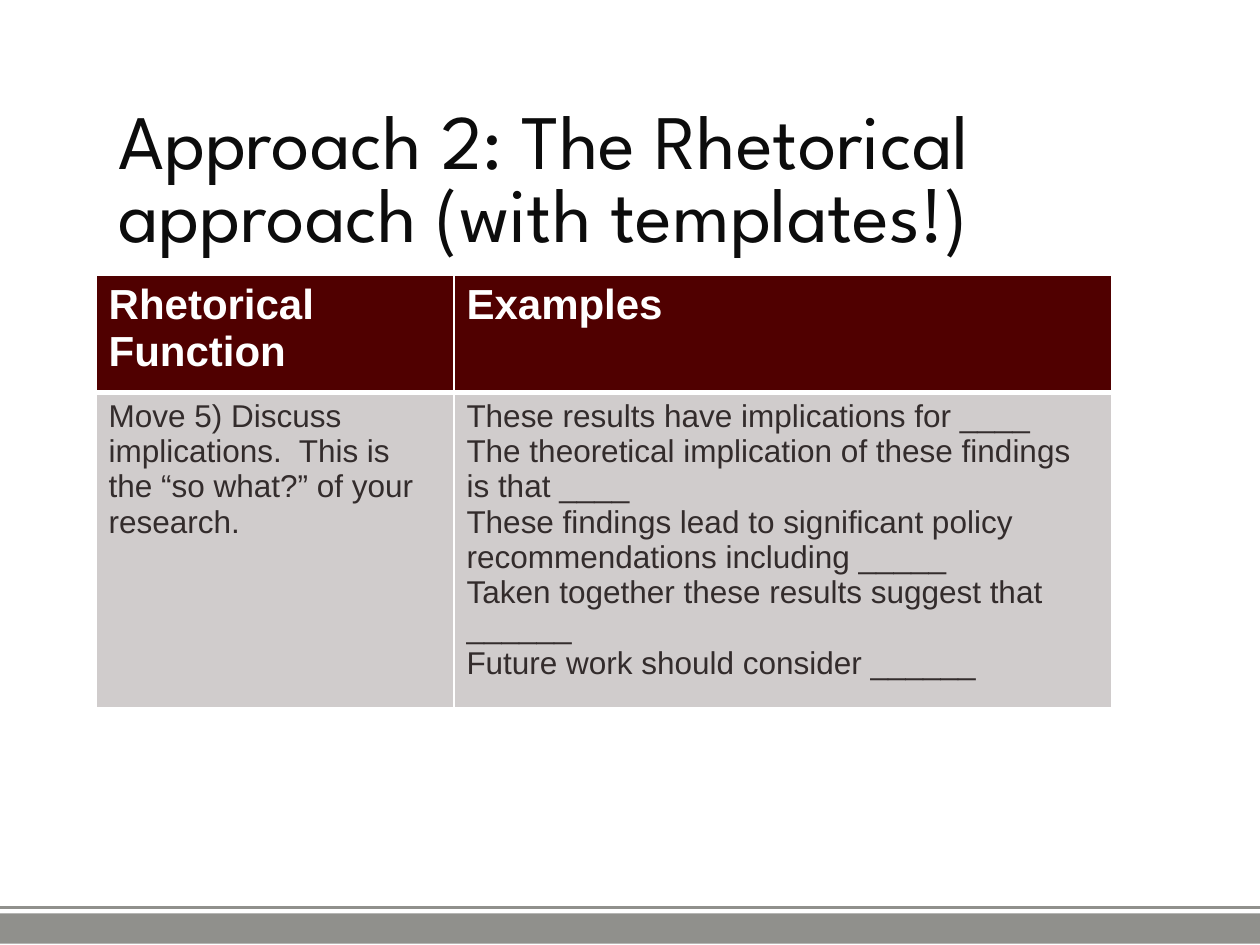
from dataclasses import dataclass

from lxml import etree
from pptx import Presentation
from pptx.dml.color import RGBColor
from pptx.enum.shapes import MSO_CONNECTOR, MSO_SHAPE
from pptx.enum.text import MSO_ANCHOR
from pptx.oxml.ns import qn
from pptx.util import Pt

RECTANGLE = MSO_SHAPE.RECTANGLE
STRAIGHT = MSO_CONNECTOR.STRAIGHT
MIDDLE = MSO_ANCHOR.MIDDLE


@dataclass(frozen=True)
class Theme:
    title_font: str = "League Spartan"
    body_font: str = "Arial"
    title_size: int = 44
    header_size: int = 24
    body_size: int = 18
    title_color: str = "0C0C0C"
    header_color: str = "FFFFFF"
    header_fill: str = "500000"
    body_color: str = "332C2C"
    body_fill: str = "D0CCCC"
    border: str = "FFFFFF"
    footer: str = "90908C"


THEME = Theme()
SLIDE_WIDTH, SLIDE_HEIGHT = 720, 540
COLUMN_WIDTHS = (204.5, 375.8)
ROW_HEIGHTS = (67, 125.3)
HEADINGS = ("Rhetorical Function", "Examples")
FUNCTION = ("Move 5) Discuss implications.  This is the “so what?” of your research.",)
EXAMPLES = (
    "These results have implications for ____",
    "The theoretical implication of these findings is that ____",
    "These findings lead to significant policy recommendations including _____",
    "Taken together these results suggest that ______",
    "Future work should consider ______",
)


def color(value):
    return RGBColor.from_string(value)


def add_run(paragraph, text, font_name, size, text_color, bold=False):
    run = paragraph.add_run()
    run.text = text
    run.font.name = font_name
    run.font.size = Pt(size)
    run.font.bold = bold
    run.font.color.rgb = color(text_color)


def add_title(slide, text):
    shape = slide.shapes.add_textbox(Pt(60.5), Pt(46), Pt(574), Pt(118))
    frame = shape.text_frame
    frame.word_wrap = True
    frame.vertical_anchor = MIDDLE
    frame.margin_left = frame.margin_right = Pt(7.2)
    frame.margin_top = frame.margin_bottom = Pt(7.2)
    paragraph = frame.paragraphs[0]
    paragraph.line_spacing = 0.8
    add_run(paragraph, text, THEME.title_font, THEME.title_size, THEME.title_color)


def add_footer(slide):
    band = slide.shapes.add_shape(RECTANGLE, 0, Pt(522), Pt(SLIDE_WIDTH), Pt(17.3))
    band.shadow.inherit = False
    band.fill.solid()
    band.fill.fore_color.rgb = color(THEME.footer)
    band.line.fill.background()
    rule = slide.shapes.add_connector(STRAIGHT, 0, Pt(518.4), Pt(SLIDE_WIDTH), Pt(518.4))
    rule.line.color.rgb = color(THEME.footer)
    rule.line.width = Pt(1.5)
    etree.SubElement(rule._element.spPr, qn("a:effectLst"))


def set_borders(cell, bottom_width):
    properties = cell._tc.get_or_add_tcPr()
    widths = {"lnL": 1, "lnR": 1, "lnT": 1, "lnB": bottom_width}
    for position, (side, width) in enumerate(widths.items()):
        line = etree.Element(qn(f"a:{side}"), w=str(Pt(width)))
        fill = etree.SubElement(line, qn("a:solidFill"))
        etree.SubElement(fill, qn("a:srgbClr"), val=THEME.border)
        properties.insert(position, line)


def fill_cell(cell, lines, size, text_color, fill, bold, bottom_width):
    cell.fill.solid()
    cell.fill.fore_color.rgb = color(fill)
    set_borders(cell, bottom_width)
    frame = cell.text_frame
    for index, line in enumerate(lines):
        paragraph = frame.add_paragraph() if index else frame.paragraphs[0]
        add_run(paragraph, line, THEME.body_font, size, text_color, bold)


def add_moves_table(slide):
    table = slide.shapes.add_table(
        len(ROW_HEIGHTS), len(COLUMN_WIDTHS), Pt(54.9), Pt(157.2),
        Pt(sum(COLUMN_WIDTHS)), Pt(sum(ROW_HEIGHTS)),
    ).table
    for column, width in zip(table.columns, COLUMN_WIDTHS):
        column.width = Pt(width)
    for row, height in zip(table.rows, ROW_HEIGHTS):
        row.height = Pt(height)
    for index, heading in enumerate(HEADINGS):
        fill_cell(table.cell(0, index), (heading,), THEME.header_size,
                  THEME.header_color, THEME.header_fill, True, 3)
    for index, lines in enumerate((FUNCTION, EXAMPLES)):
        fill_cell(table.cell(1, index), lines, THEME.body_size,
                  THEME.body_color, THEME.body_fill, False, 1)


def main():
    presentation = Presentation()
    presentation.slide_width = Pt(SLIDE_WIDTH)
    presentation.slide_height = Pt(SLIDE_HEIGHT)
    slide = presentation.slides.add_slide(presentation.slide_layouts[6])
    add_footer(slide)
    add_title(slide, "Approach 2: The Rhetorical approach (with templates!)")
    add_moves_table(slide)
    presentation.save("out.pptx")


if __name__ == "__main__":
    main()
